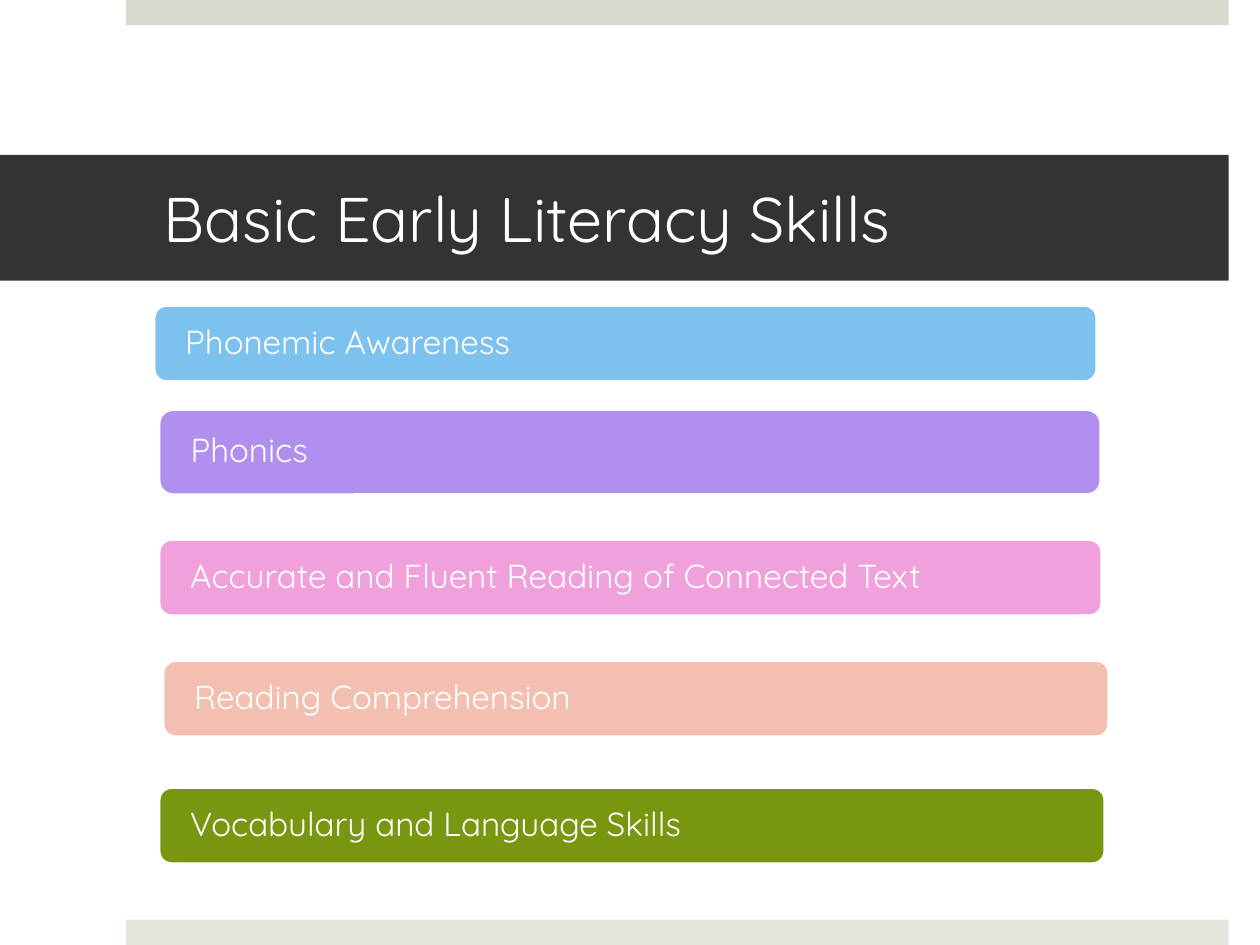
from pptx import Presentation
from pptx.dml.color import RGBColor
from pptx.enum.shapes import MSO_SHAPE
from pptx.enum.text import MSO_ANCHOR, MSO_AUTO_SIZE, PP_ALIGN
from pptx.util import Cm, Pt

RECTANGLE = MSO_SHAPE.RECTANGLE
ROUNDED = MSO_SHAPE.ROUNDED_RECTANGLE
MIDDLE = MSO_ANCHOR.MIDDLE
LEFT = PP_ALIGN.LEFT
NO_AUTOFIT = MSO_AUTO_SIZE.NONE

FONT = "Quicksand"
COLORS = {
    "white": "FFFFFF",
    "top_band": "D6D9CD",
    "bottom_band": "E4E6DE",
    "title": "333333",
    "blue": "7DC1EF",
    "purple": "B08FEF",
    "pink": "F0A0DA",
    "peach": "F2BFB1",
    "green": "799611",
}
SKILLS = [
    ("Phonemic Awareness", "blue", 3.1, 6.15, 19.02, 1.55),
    ("Phonics", "purple", 3.2, 8.25, 19, 1.73),
    ("Accurate and Fluent Reading of Connected Text", "pink", 3.2, 10.87, 19.02, 1.55),
    ("Reading Comprehension", "peach", 3.28, 13.31, 19.08, 1.55),
    ("Vocabulary and Language Skills", "green", 3.2, 15.87, 19.08, 1.55),
]


def color(name):
    return RGBColor.from_string(COLORS[name])


def paint(shape, fill):
    shape.fill.solid()
    shape.fill.fore_color.rgb = color(fill)


def write(shape, text, *, size, left, right, vertical=0, spacing=1.0):
    frame = shape.text_frame
    frame.word_wrap = True
    frame.auto_size = NO_AUTOFIT
    frame.vertical_anchor = MIDDLE
    frame.margin_left, frame.margin_right = Cm(left), Cm(right)
    frame.margin_top = frame.margin_bottom = Cm(vertical)
    paragraph = frame.paragraphs[0]
    paragraph.alignment = LEFT
    paragraph.line_spacing = spacing
    run = paragraph.add_run()
    run.text = text
    run.font.name = FONT
    run.font.size = Pt(size)
    run.font.color.rgb = color("white")


def add_block(slide, kind, fill, left, top, width, height):
    block = slide.shapes.add_shape(kind, Cm(left), Cm(top), Cm(width), Cm(height))
    block.shadow.inherit = False
    paint(block, fill)
    block.line.fill.background()
    return block


def add_title(slide, text):
    title = slide.shapes.title
    title.left, title.top = Cm(0), Cm(3.12)
    title.width, title.height = Cm(24.77), Cm(2.54)
    paint(title, "title")
    write(title, text, size=36, left=3.3, right=0.76, vertical=0.13)


def add_skill(slide, text, fill, *position):
    bar = add_block(slide, ROUNDED, fill, *position)
    bar.line.color.rgb = color("white")
    bar.line.width = Pt(2)
    write(bar, text, size=19, left=0.56, right=0.56, spacing=0.9)


def main():
    presentation = Presentation()
    presentation.slide_width, presentation.slide_height = Cm(25.4), Cm(19.05)
    slide = presentation.slides.add_slide(presentation.slide_layouts[5])
    for fill, top in (("top_band", 0), ("bottom_band", 18.54)):
        add_block(slide, RECTANGLE, fill, 2.54, top, 22.23, 0.51)
    add_title(slide, "Basic Early Literacy Skills")
    for skill in SKILLS:
        add_skill(slide, *skill)
    presentation.save("out.pptx")


if __name__ == "__main__":
    main()
